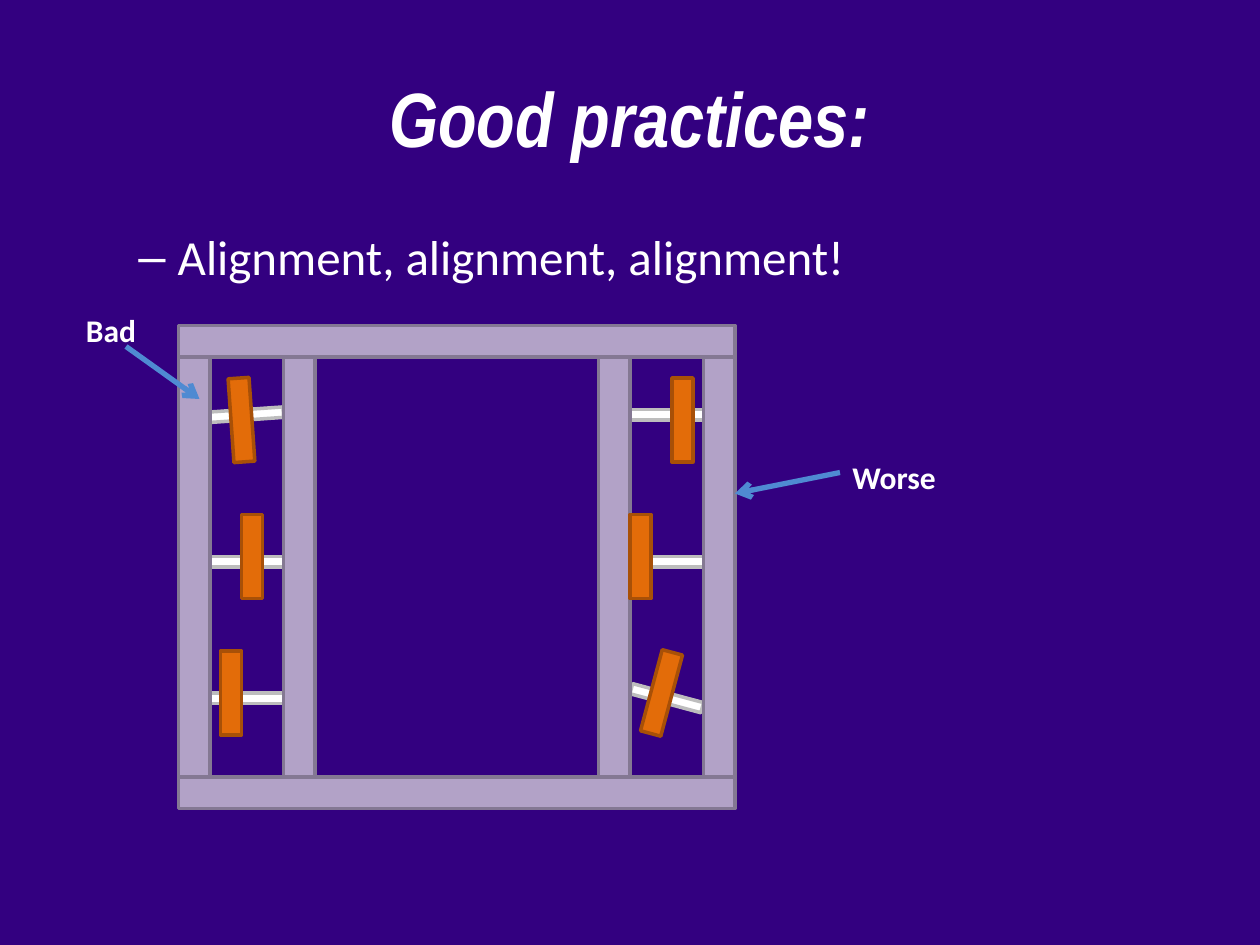
from dataclasses import dataclass

import lxml.etree
import pptx
import pptx.dml.color
import pptx.enum.shapes
import pptx.enum.text
import pptx.oxml.ns
import pptx.shapes.autoshape
import pptx.slide
import pptx.util

Pt = pptx.util.Pt
RGBColor = pptx.dml.color.RGBColor
qn = pptx.oxml.ns.qn

PURPLE = RGBColor(0x33, 0x00, 0x80)
WHITE = RGBColor(0xFF, 0xFF, 0xFF)
SILVER = RGBColor(0xBD, 0xBD, 0xBD)
LILAC = RGBColor(0xB2, 0xA2, 0xC7)
DARK_LILAC = RGBColor(0x84, 0x78, 0x93)
ORANGE = RGBColor(0xE3, 0x6C, 0x09)
BROWN = RGBColor(0xA8, 0x50, 0x07)
BLUE = RGBColor(0x4F, 0x8A, 0xD2)

FRAME_LEFT, FRAME_TOP, FRAME_WIDTH, FRAME_HEIGHT = 102, 186, 318, 276
BEAM = 18
AXLE_WIDTH, AXLE_HEIGHT = 42, 6
WHEEL_WIDTH, WHEEL_HEIGHT = 12, 48
LEFT_TRACK = FRAME_LEFT + BEAM
RIGHT_TRACK = FRAME_LEFT + FRAME_WIDTH - BEAM - AXLE_WIDTH
AXLE_TOPS = (234, 318, 396)
WHEEL_TOPS = (216, 294, 372)


@dataclass(frozen=True)
class Style:
    fill: RGBColor
    line: RGBColor


@dataclass(frozen=True)
class Roller:
    track: float
    row: int
    wheel_offset: float
    rotation: float = 0


@dataclass(frozen=True)
class Label:
    text: str
    left: float
    top: float
    width: float
    height: float
    size: float
    font: str = "Calibri"
    bold: bool = True
    italic: bool = False
    wrap: bool = True


@dataclass(frozen=True)
class Arrow:
    start: tuple[float, float]
    end: tuple[float, float]


AXLE_STYLE = Style(WHITE, SILVER)
FRAME_STYLE = Style(LILAC, DARK_LILAC)
WHEEL_STYLE = Style(ORANGE, BROWN)

ROLLERS = (
    Roller(LEFT_TRACK, 0, 12, 356),
    Roller(LEFT_TRACK, 1, 18),
    Roller(LEFT_TRACK, 2, 6),
    Roller(RIGHT_TRACK, 0, 24),
    Roller(RIGHT_TRACK, 1, 0),
    Roller(RIGHT_TRACK, 2, 12, 15),
)
TITLE = Label("Good practices:", 36, 21.6, 648, 90, 44, "Arial Narrow", italic=True)
POINT = Label("Alignment, alignment, alignment!", 36, 126, 648, 356.4, 28, bold=False)
CALLOUTS = (
    (Label("Bad", 42, 174, 43, 29, 18, wrap=False), Arrow((72, 198), (114, 228))),
    (Label("Worse", 480, 258, 72, 29, 18), Arrow((480, 270), (420, 282))),
)


def add_bar(page: pptx.slide.Slide, left: float, top: float, width: float,
            height: float, style: Style, rotation: float = 0) -> None:
    bar = page.shapes.add_shape(
        pptx.enum.shapes.MSO_SHAPE.RECTANGLE, Pt(left), Pt(top), Pt(width), Pt(height))
    bar.shadow.inherit = False
    bar.fill.solid()
    bar.fill.fore_color.rgb = style.fill
    bar.line.color.rgb = style.line
    bar.line.width = Pt(2)
    bar.rotation = rotation


def add_label(page: pptx.slide.Slide, label: Label) -> pptx.shapes.autoshape.Shape:
    box = page.shapes.add_textbox(
        Pt(label.left), Pt(label.top), Pt(label.width), Pt(label.height))
    box.text_frame.word_wrap = label.wrap
    box.text_frame.text = label.text
    font = box.text_frame.paragraphs[0].runs[0].font
    font.name = label.font
    font.size = Pt(label.size)
    font.bold = label.bold
    font.italic = label.italic
    font.color.rgb = WHITE
    return box


def add_dash_bullet(box: pptx.shapes.autoshape.Shape) -> None:
    paragraph = box.text_frame.paragraphs[0]
    paragraph.level = 1
    properties = paragraph._p.get_or_add_pPr()
    properties.set("marL", str(Pt(58.5)))
    properties.set("indent", str(-Pt(22.5)))
    spacing = lxml.etree.SubElement(properties, qn("a:spcBef"))
    lxml.etree.SubElement(spacing, qn("a:spcPct"), val="20000")
    lxml.etree.SubElement(properties, qn("a:buFont"), typeface="Arial")
    lxml.etree.SubElement(properties, qn("a:buChar"), char="–")


def add_arrow(page: pptx.slide.Slide, arrow: Arrow) -> None:
    connector = page.shapes.add_connector(
        pptx.enum.shapes.MSO_CONNECTOR.STRAIGHT,
        *(Pt(value) for value in arrow.start + arrow.end))
    connector.line.color.rgb = BLUE
    connector.line.width = Pt(3)
    lxml.etree.SubElement(connector.line._get_or_add_ln(), qn("a:tailEnd"), type="arrow")
    lxml.etree.SubElement(connector._element.spPr, qn("a:effectLst"))


def add_frame(page: pptx.slide.Slide) -> None:
    for track in (LEFT_TRACK, RIGHT_TRACK):
        for left in (track - BEAM, track + AXLE_WIDTH):
            add_bar(page, left, FRAME_TOP + 12, BEAM, FRAME_HEIGHT - BEAM, FRAME_STYLE)
    for top in (FRAME_TOP, FRAME_TOP + FRAME_HEIGHT - BEAM):
        add_bar(page, FRAME_LEFT, top, FRAME_WIDTH, BEAM, FRAME_STYLE)


def main() -> None:
    deck = pptx.Presentation()
    deck.slide_width, deck.slide_height = Pt(720), Pt(540)
    page = deck.slides.add_slide(deck.slide_layouts[6])
    page.background.fill.solid()
    page.background.fill.fore_color.rgb = PURPLE

    title = add_label(page, TITLE)
    title.text_frame.vertical_anchor = pptx.enum.text.MSO_ANCHOR.MIDDLE
    title.text_frame.paragraphs[0].alignment = pptx.enum.text.PP_ALIGN.CENTER
    add_dash_bullet(add_label(page, POINT))

    for roller in ROLLERS:
        add_bar(page, roller.track, AXLE_TOPS[roller.row], AXLE_WIDTH, AXLE_HEIGHT,
                AXLE_STYLE, roller.rotation)
    add_frame(page)
    for roller in ROLLERS:
        add_bar(page, roller.track + roller.wheel_offset, WHEEL_TOPS[roller.row],
                WHEEL_WIDTH, WHEEL_HEIGHT, WHEEL_STYLE, roller.rotation)

    for label, arrow in CALLOUTS:
        add_arrow(page, arrow)
        add_label(page, label)

    deck.save("out.pptx")


if __name__ == "__main__":
    main()
